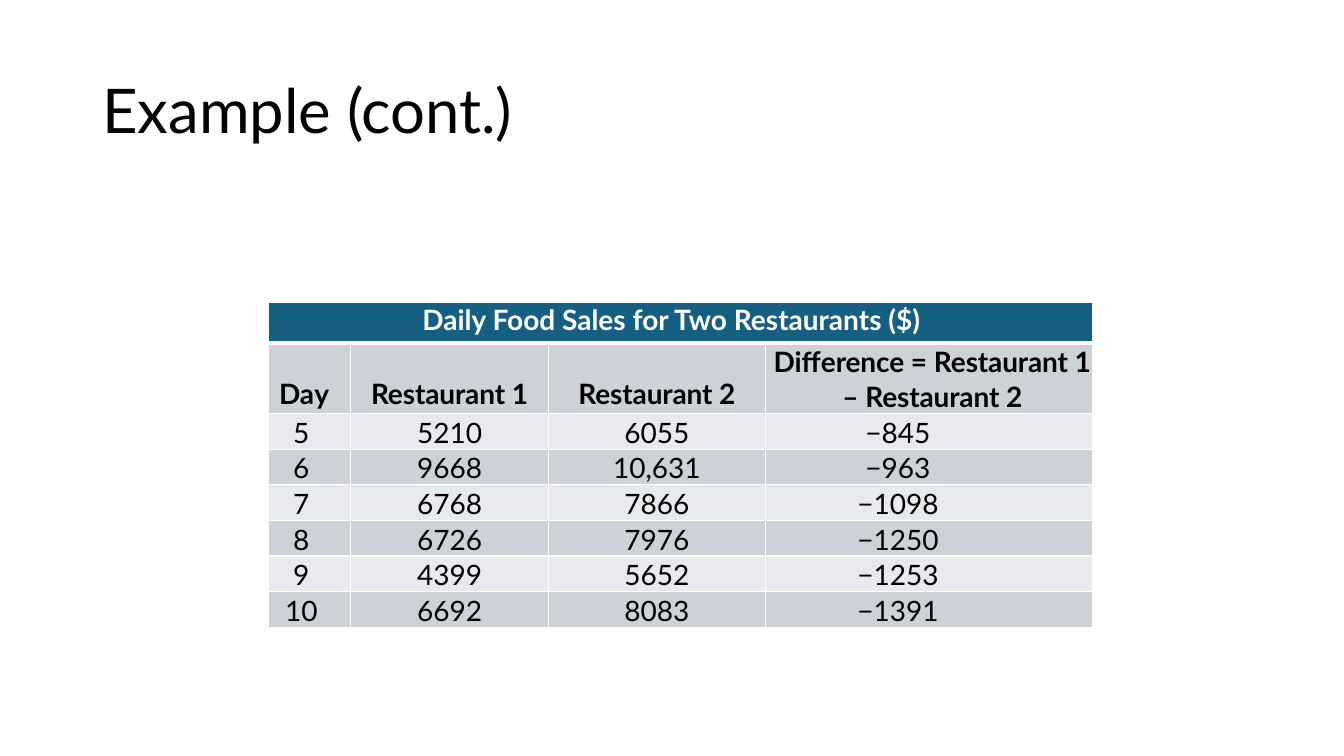
from pptx import Presentation
from pptx import util as u
from pptx.dml.color import RGBColor
from pptx.enum import text
from lxml import etree

TITLE = "Example (cont.)"
CAPTION = "Daily Food Sales for Two Restaurants ($)"
TIGHT = -10
HEADERS = [
    [[("Da", TIGHT), ("y", 0)]],
    [[("Restaurant ", TIGHT), ("1", 0)]],
    [[("Restaurant ", TIGHT), ("2", 0)]],
    [[("Difference ", TIGHT), ("= ", 0), ("Restaurant ", TIGHT), ("1", 0)],
     [("– ", 0), ("Restaurant ", TIGHT), ("2", 0)]],
]
SALES = [
    ("5", "5210", "6055", "−845"),
    ("6", "9668", "10,631", "−963"),
    ("7", "6768", "7866", "−1098"),
    ("8", "6726", "7976", "−1250"),
    ("9", "4399", "5652", "−1253"),
    ("10", "6692", "8083", "−1391"),
]
THEME = {
    "font": "Lato", "title": 44, "table": 20,
    "black": "000000", "white": "FFFFFF",
    "caption": "156082", "bands": ("CCD2D8", "E8EAED"),
}
COL_WIDTHS = [58.5, 141.3, 155, 233.4]
ROW_HEIGHTS = [28.6, 50.7] + [25.4] * len(SALES)
CAPTION_RIGHT = 13
HEADER_RIGHT = [8, 0, 0, 0]
BODY_RIGHT = [12, 0, 0, 44]
NS = "http://schemas.openxmlformats.org/drawingml/2006/main"


def add_run(p, words, size, color, bold=False, spacing=0):
    r = p.add_run()
    r.text = words
    f = r.font
    f.name, f.size, f.bold = THEME["font"], u.Pt(size), bold
    f.color.rgb = RGBColor.from_string(color)
    if spacing:
        r._r.get_or_add_rPr().set("spc", str(spacing))


def set_borders(cell, bottom=1):
    tcPr = cell._tc.get_or_add_tcPr()
    widths = {"lnL": 1, "lnR": 1, "lnT": 1, "lnB": bottom}
    for i, (tag, width) in enumerate(widths.items()):
        ln = etree.Element(f"{{{NS}}}{tag}", w=str(u.Pt(width)))
        fill = etree.SubElement(ln, f"{{{NS}}}solidFill")
        etree.SubElement(fill, f"{{{NS}}}srgbClr", val=THEME["white"])
        tcPr.insert(i, ln)


def fill_cell(cell, lines, fill, color="black", bold=False, right=0,
              top=0, bottom=0, indent=0, anchor=text.MSO_ANCHOR.TOP, rule=1):
    cell.fill.solid()
    cell.fill.fore_color.rgb = RGBColor.from_string(fill)
    cell.margin_left, cell.margin_right = 0, u.Pt(right)
    cell.margin_top, cell.margin_bottom = u.Pt(top), u.Pt(bottom)
    cell.vertical_anchor = anchor
    tf = cell.text_frame
    for i, line in enumerate(lines):
        p = tf.add_paragraph() if i else tf.paragraphs[0]
        p.alignment = text.PP_ALIGN.CENTER
        if i:
            p.space_before = u.Pt(1.2)
        if indent:
            p._p.get_or_add_pPr().set("marL", str(u.Pt(indent)))
        for words, spacing in line:
            add_run(p, words, THEME["table"], THEME[color], bold, spacing)
    set_borders(cell, rule)


def add_title(s):
    sp = s.shapes.add_textbox(u.Pt(66), u.Pt(28.75), u.Pt(828), u.Pt(104.4))
    tf = sp.text_frame
    tf.word_wrap = True
    tf.vertical_anchor = text.MSO_ANCHOR.MIDDLE
    p = tf.paragraphs[0]
    p.line_spacing = 0.9
    add_run(p, TITLE, THEME["title"], THEME["black"])


def add_sales_table(s):
    frame = s.shapes.add_table(len(ROW_HEIGHTS), len(COL_WIDTHS), u.Pt(192), u.Pt(216.2),
                               u.Pt(sum(COL_WIDTHS)), u.Pt(sum(ROW_HEIGHTS)))
    table = frame.table
    for col, width in zip(table.columns, COL_WIDTHS):
        col.width = u.Pt(width)
    for row, height in zip(table.rows, ROW_HEIGHTS):
        row.height = u.Pt(height)

    caption = table.cell(0, 0)
    caption.merge(table.cell(0, len(COL_WIDTHS) - 1))
    fill_cell(caption, [[(CAPTION, 0)]], THEME["caption"], "white", True,
              right=CAPTION_RIGHT, rule=3)
    for c, lines in enumerate(HEADERS):
        tall = len(lines) > 1
        fill_cell(table.cell(1, c), lines, THEME["bands"][0], bold=True,
                  right=HEADER_RIGHT[c], top=1.4 if tall else 0,
                  bottom=0 if tall else 2, indent=5 if tall else 0,
                  anchor=text.MSO_ANCHOR.TOP if tall else text.MSO_ANCHOR.BOTTOM)
    for r, values in enumerate(SALES, start=2):
        for c, value in enumerate(values):
            fill_cell(table.cell(r, c), [[(value, 0)]], THEME["bands"][(r + 1) % 2],
                      right=BODY_RIGHT[c], top=1.4)


def main():
    prs = Presentation()
    prs.slide_width, prs.slide_height = u.Pt(960), u.Pt(540)
    s = prs.slides.add_slide(prs.slide_layouts[6])
    add_title(s)
    add_sales_table(s)
    prs.save("out.pptx")


if __name__ == "__main__":
    main()
